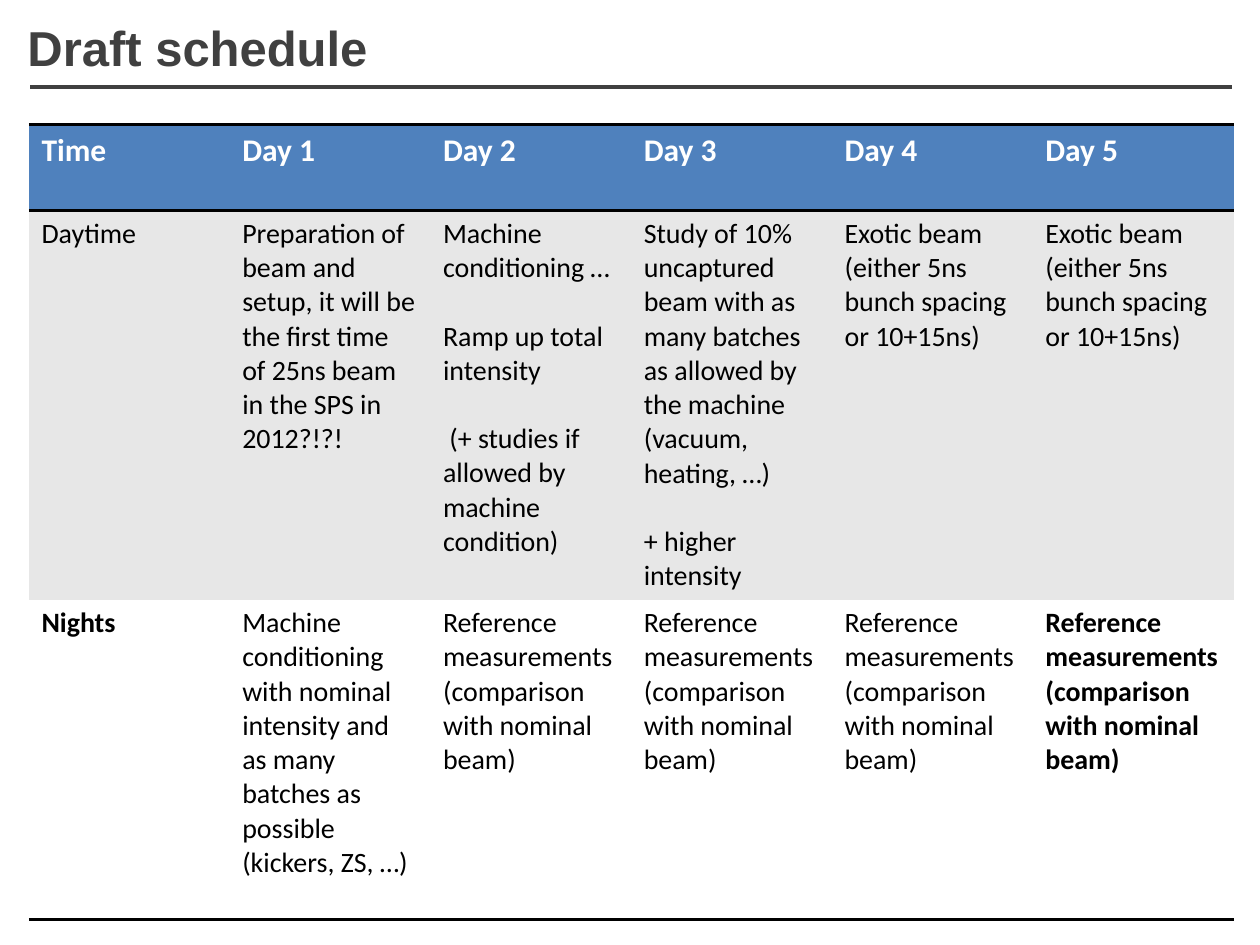
import pptx
import pptx.util
import pptx.dml.color
import pptx.enum.shapes
import pptx.enum.text
import pptx.oxml.ns
from lxml import etree
from pptx.util import Inches

COLORS = {
    "ink": "404040",
    "rule": "000000",
    "header": "4F81BD",
    "header_text": "FFFFFF",
    "day": "E7E7E7",
    "night": "FFFFFF",
    "body_text": "000000",
}
BLANK_LINE = 19.5

EXOTIC = ["Exotic beam (either 5ns bunch spacing or 10+15ns)"]
REFERENCE = ["Reference measurements (comparison with nominal beam)"]
HEADINGS = [["Time"]] + [[f"Day {day}"] for day in range(1, 6)]
DAYTIME = [
    ["Daytime"],
    ["Preparation of beam and setup, it will be the first time of 25ns beam "
     "in the SPS in 2012?!?!"],
    ["Machine conditioning …", "Ramp up total intensity",
     " (+ studies if allowed by machine condition)"],
    ["Study of 10% uncaptured beam with as many batches as allowed by the "
     "machine (vacuum, heating, …)", "+ higher intensity"],
    EXOTIC,
    EXOTIC,
]
NIGHTS = [
    ["Nights"],
    ["Machine conditioning with nominal intensity and as many batches as "
     "possible (kickers, ZS, …)"],
] + [REFERENCE] * 4

# fill, text colour, size, bold columns, ruled edges, height, cells
ROWS = [
    ("header", "header_text", 18, range(6), "TB", 0.68, HEADINGS),
    ("day", "body_text", 16, (), "T", 3.09, DAYTIME),
    ("night", "body_text", 16, (0, 5), "B", 2.54, NIGHTS),
]


def rgb(name):
    return pptx.dml.color.RGBColor.from_string(COLORS[name])


class SlideBuilder:
    title_font = "Arial"
    body_font = "Calibri"
    line_width = pptx.util.Pt(2)

    def __init__(self, slide):
        self.slide = slide

    def add_text(self, frame, paragraphs, font, size, color, bold):
        """Fill a text frame, leaving one line's space between paragraphs."""
        frame.word_wrap = True
        for index, text in enumerate(paragraphs):
            paragraph = frame.add_paragraph() if index else frame.paragraphs[0]
            if index:
                paragraph.space_before = pptx.util.Pt(BLANK_LINE)
            run = paragraph.add_run()
            run.text = text
            run.font.name = font
            run.font.size = pptx.util.Pt(size)
            run.font.bold = bold
            run.font.color.rgb = rgb(color)

    def title(self, text, left, top, width, height):
        box = self.slide.shapes.add_textbox(
            Inches(left), Inches(top), Inches(width), Inches(height))
        box.text_frame.vertical_anchor = pptx.enum.text.MSO_ANCHOR.MIDDLE
        self.add_text(box.text_frame, [text], self.title_font, 28, "ink", True)

    def rule(self, left, right, y):
        line = self.slide.shapes.add_connector(
            pptx.enum.shapes.MSO_CONNECTOR.STRAIGHT,
            Inches(left), Inches(y), Inches(right), Inches(y))
        line.line.color.rgb = rgb("ink")
        line.line.width = self.line_width
        etree.SubElement(line._element.spPr, pptx.oxml.ns.qn("a:effectLst"))

    def cell_borders(self, cell, ruled):
        """Draw the edges named in ruled (L, R, T, B) and clear the others."""
        qn = pptx.oxml.ns.qn
        properties = cell._tc.get_or_add_tcPr()
        for position, edge in enumerate("LRTB"):
            border = etree.Element(qn(f"a:ln{edge}"))
            properties.insert(position, border)
            if edge in ruled:
                border.set("w", str(int(self.line_width)))
                fill = etree.SubElement(border, qn("a:solidFill"))
                etree.SubElement(fill, qn("a:srgbClr"), val=COLORS["rule"])
            else:
                etree.SubElement(border, qn("a:noFill"))

    def schedule(self, rows, left, top, width):
        column_count = len(rows[0][-1])
        height = sum(row[5] for row in rows)
        table = self.slide.shapes.add_table(
            len(rows), column_count, Inches(left), Inches(top),
            Inches(width), Inches(height)).table
        table.first_row = False
        table.horz_banding = False
        for r, (fill, color, size, bold, ruled, row_height, cells) in enumerate(rows):
            table.rows[r].height = Inches(row_height)
            for c, paragraphs in enumerate(cells):
                cell = table.cell(r, c)
                cell.fill.solid()
                cell.fill.fore_color.rgb = rgb(fill)
                self.cell_borders(cell, ruled)
                self.add_text(cell.text_frame, paragraphs, self.body_font,
                              size, color, c in bold)


def main():
    deck = pptx.Presentation()
    deck.slide_width, deck.slide_height = Inches(10), Inches(7.5)
    builder = SlideBuilder(deck.slides.add_slide(deck.slide_layouts[6]))
    builder.rule(0.24, 9.78, 0.69)
    builder.title("Draft schedule", 0.12, 0, 9.7, 0.75)
    builder.schedule(ROWS, 0.23, 0.99, 9.56)
    deck.save("out.pptx")


if __name__ == "__main__":
    main()
